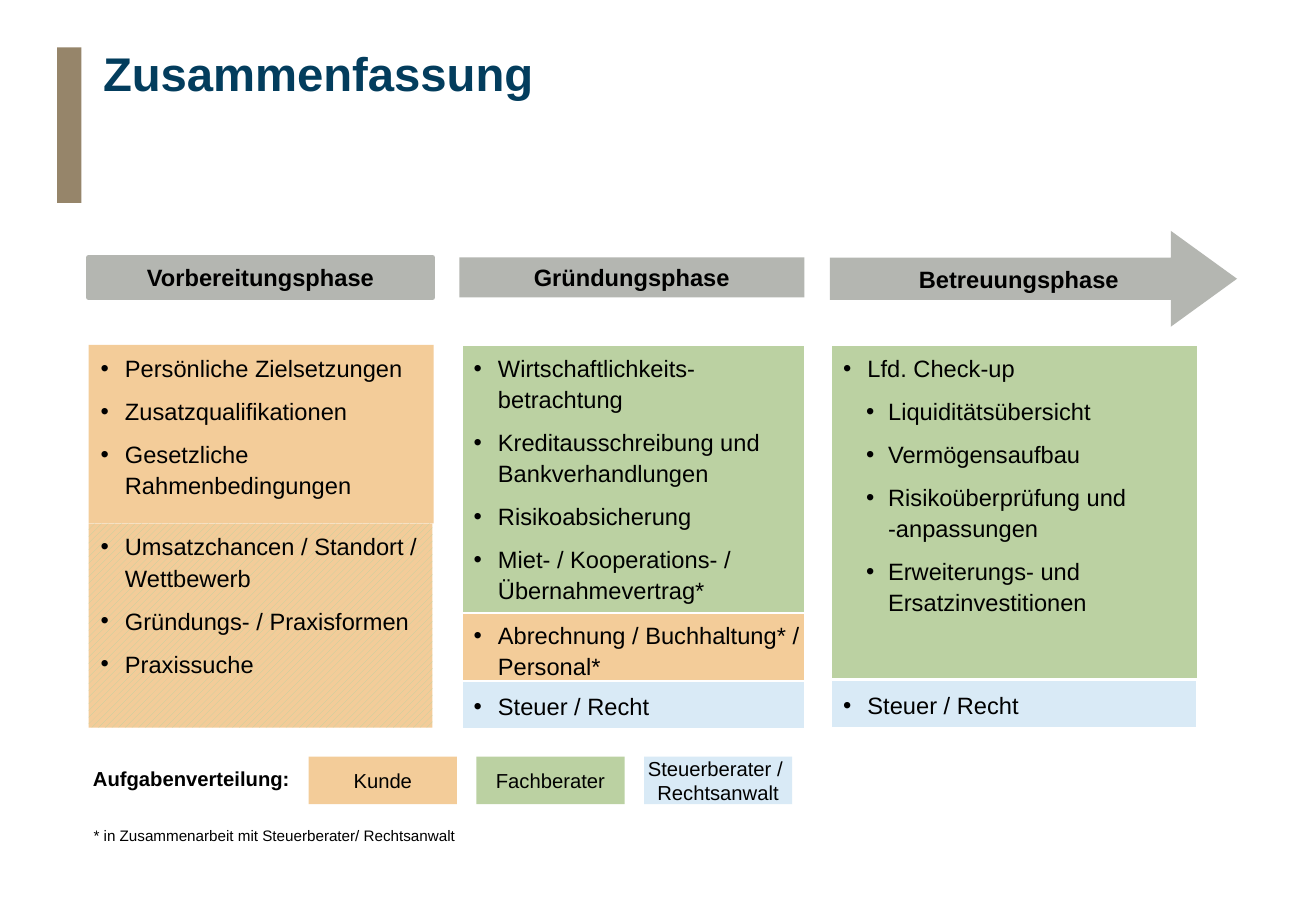
import pptx
import pptx.util
import pptx.dml.color
import pptx.enum.dml
import pptx.enum.shapes
import pptx.enum.text
import pptx.oxml.ns
import lxml.etree

PX = 9144
COLORS = {
    "accent": "96856A",
    "title": "033D5D",
    "phase": "B4B6B1",
    "client": "F3CC99",
    "adviser": "BBD1A2",
    "tax": "D9EAF6",
    "text": "000000",
    "border": "FFFFFF",
}
INDENTS = [(20, -20), (37, -18)]
SHAPES = pptx.enum.shapes.MSO_SHAPE
ALIGN = pptx.enum.text.PP_ALIGN
ANCHOR = pptx.enum.text.MSO_ANCHOR
qualified = pptx.oxml.ns.qn


def rgb(name):
    return pptx.dml.color.RGBColor.from_string(COLORS[name])


def add_text_shape(box, items=(), kind=None, fill=None, line=None, line_width=1.25,
                   size=14, color="text", bold=False, bullets=False, align=ALIGN.LEFT,
                   anchor=ANCHOR.TOP, insets=(10, 5, 10, 5), wrap=True, spacing=None):
    left, top, width, height = [value * PX for value in box]
    if kind is None:
        shape = slide.shapes.add_textbox(left, top, width, height)
    else:
        shape = slide.shapes.add_shape(kind, left, top, width, height)
        shape.shadow.inherit = False
        shape.fill.solid()
        shape.fill.fore_color.rgb = rgb(fill)
        if line:
            shape.line.color.rgb = rgb(line)
            shape.line.width = pptx.util.Pt(line_width)
        else:
            shape.line.fill.background()
    frame = shape.text_frame
    frame.word_wrap = wrap
    frame.vertical_anchor = anchor
    frame.margin_left, frame.margin_top, frame.margin_right, frame.margin_bottom = [
        value * PX for value in insets]
    for index, (text, level) in enumerate(items):
        paragraph = frame.paragraphs[0] if index == 0 else frame.add_paragraph()
        paragraph.text = text
        paragraph.level = level
        paragraph.alignment = align
        if bullets:
            properties = paragraph._p.get_or_add_pPr()
            margin, indent = INDENTS[level]
            properties.set("marL", str(margin * PX))
            properties.set("indent", str(indent * PX))
            lxml.etree.SubElement(properties, qualified("a:buFont"), typeface="Arial")
            lxml.etree.SubElement(properties, qualified("a:buChar"), char="•")
            if index:
                paragraph.space_before = pptx.util.Pt(7)
        if spacing:
            paragraph.line_spacing = spacing
        for run in paragraph.runs:
            run.font.name = "Arial"
            run.font.size = pptx.util.Pt(size)
            run.font.bold = bold
            run.font.color.rgb = rgb(color)
        for line_break in paragraph._p.findall(qualified("a:br")):
            lxml.etree.SubElement(line_break, qualified("a:rPr"), sz=str(size * 100))
    return shape


presentation = pptx.Presentation()
presentation.slide_width = 1083 * PX
presentation.slide_height = 750 * PX
slide = presentation.slides.add_slide(presentation.slide_layouts[6])

add_text_shape((47, 39, 20, 128), kind=SHAPES.RECTANGLE, fill="accent")
add_text_shape((75, 35, 988, 108), [("Zusammenfassung", 0)], size=28, color="title",
               bold=True, spacing=0.95)

phases = [
    ("Betreuungsphase", (683, 190, 335, 79), SHAPES.RIGHT_ARROW, None),
    ("Vorbereitungsphase", (73, 212, 283, 33), SHAPES.RECTANGLE, "phase"),
    ("Gründungsphase", (378, 212, 284, 33), SHAPES.RECTANGLE, None),
]
for name, box, kind, line in phases:
    phase = add_text_shape(box, [(name, 0)], kind=kind, fill="phase", line=line,
                           line_width=3, bold=True, align=ALIGN.CENTER,
                           anchor=ANCHOR.MIDDLE)
    if kind == SHAPES.RIGHT_ARROW:
        phase.adjustments[0] = 0.44
        phase.adjustments[1] = 0.69

TIGHT = (10, 5, 4, 5)
WIDE = (10, 5, 10, 5)
task_boxes = [
    ((73, 284, 284, 147), "client", None, ANCHOR.TOP, TIGHT, [
        ("Persönliche Zielsetzungen", 0),
        ("Zusatzqualifikationen", 0),
        ("Gesetzliche Rahmenbedingungen", 0)]),
    ((380, 284, 283, 223), "adviser", "border", ANCHOR.TOP, WIDE, [
        ("Wirtschaftlichkeits-betrachtung", 0),
        ("Kreditausschreibung und Bankverhandlungen", 0),
        ("Risikoabsicherung", 0),
        ("Miet- / Kooperations- / Übernahmevertrag*", 0)]),
    ((684, 284, 302, 275), "adviser", "border", ANCHOR.TOP, WIDE, [
        ("Lfd. Check-up", 0),
        ("Liquiditätsübersicht", 1),
        ("Vermögensaufbau", 1),
        ("Risikoüberprüfung und\n-anpassungen", 1),
        ("Erweiterungs- und Ersatzinvestitionen", 1)]),
    ((380, 505, 283, 59), "client", "border", ANCHOR.MIDDLE, TIGHT, [
        ("Abrechnung / Buchhaltung* / Personal*", 0)]),
    ((380, 561, 283, 39), "tax", "border", ANCHOR.MIDDLE, WIDE, [("Steuer / Recht", 0)]),
    ((684, 560, 301, 39), "tax", "border", ANCHOR.MIDDLE, WIDE, [("Steuer / Recht", 0)]),
    ((73, 431, 283, 168), "client", None, ANCHOR.TOP, WIDE, [
        ("Umsatzchancen / Standort / Wettbewerb", 0),
        ("Gründungs- / Praxisformen", 0),
        ("Praxissuche", 0)]),
]
for box, fill, line, anchor, insets, items in task_boxes:
    task_box = add_text_shape(box, items, kind=SHAPES.RECTANGLE, fill=fill, line=line,
                              bullets=True, anchor=anchor, insets=insets, spacing=1.1)

shared_fill = task_box.fill
shared_fill.patterned()
shared_fill.pattern = pptx.enum.dml.MSO_PATTERN.WIDE_UPWARD_DIAGONAL
shared_fill.fore_color.rgb = rgb("adviser")
shared_fill.back_color.rgb = rgb("client")

NO_INSETS = (0, 0, 0, 0)
legend = [
    ("Kunde", "client"),
    ("Fachberater", "adviser"),
    ("Steuerberater / \nRechtsanwalt", "tax"),
]
for index, (name, fill) in enumerate(legend):
    add_text_shape((254 + 138 * index, 623, 122, 39), [(name, 0)], kind=SHAPES.RECTANGLE,
                   fill=fill, size=12, align=ALIGN.CENTER, anchor=ANCHOR.MIDDLE,
                   insets=NO_INSETS, wrap=False)

add_text_shape((73, 619, 169, 43), [("Aufgabenverteilung:", 0)], size=12, bold=True,
               align=ALIGN.CENTER, anchor=ANCHOR.MIDDLE, insets=NO_INSETS, wrap=False)
add_text_shape((77, 666, 504, 43), [("* in Zusammenarbeit mit Steuerberater/ Rechtsanwalt", 0)],
               size=9, anchor=ANCHOR.MIDDLE, insets=NO_INSETS)

presentation.save("out.pptx")
